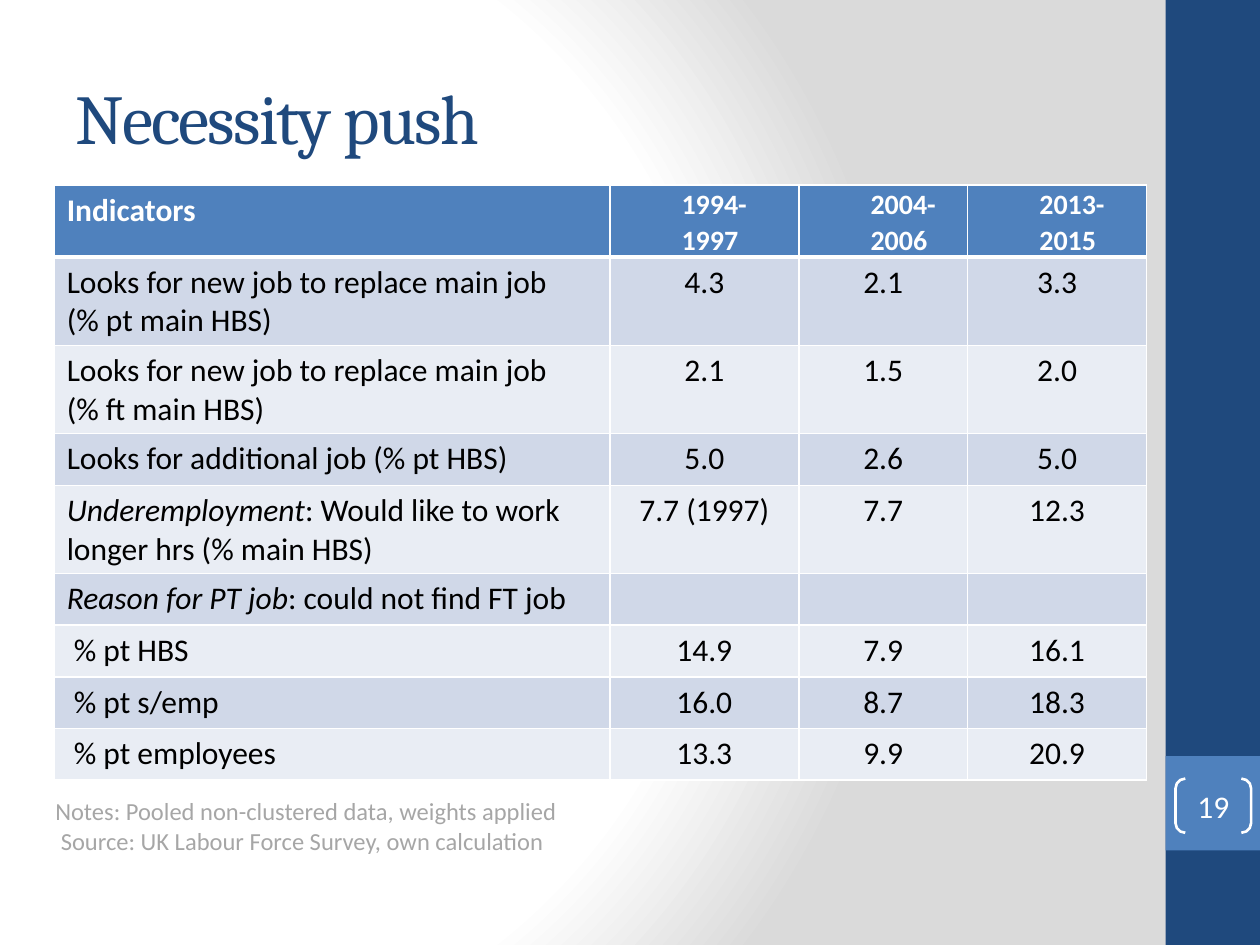
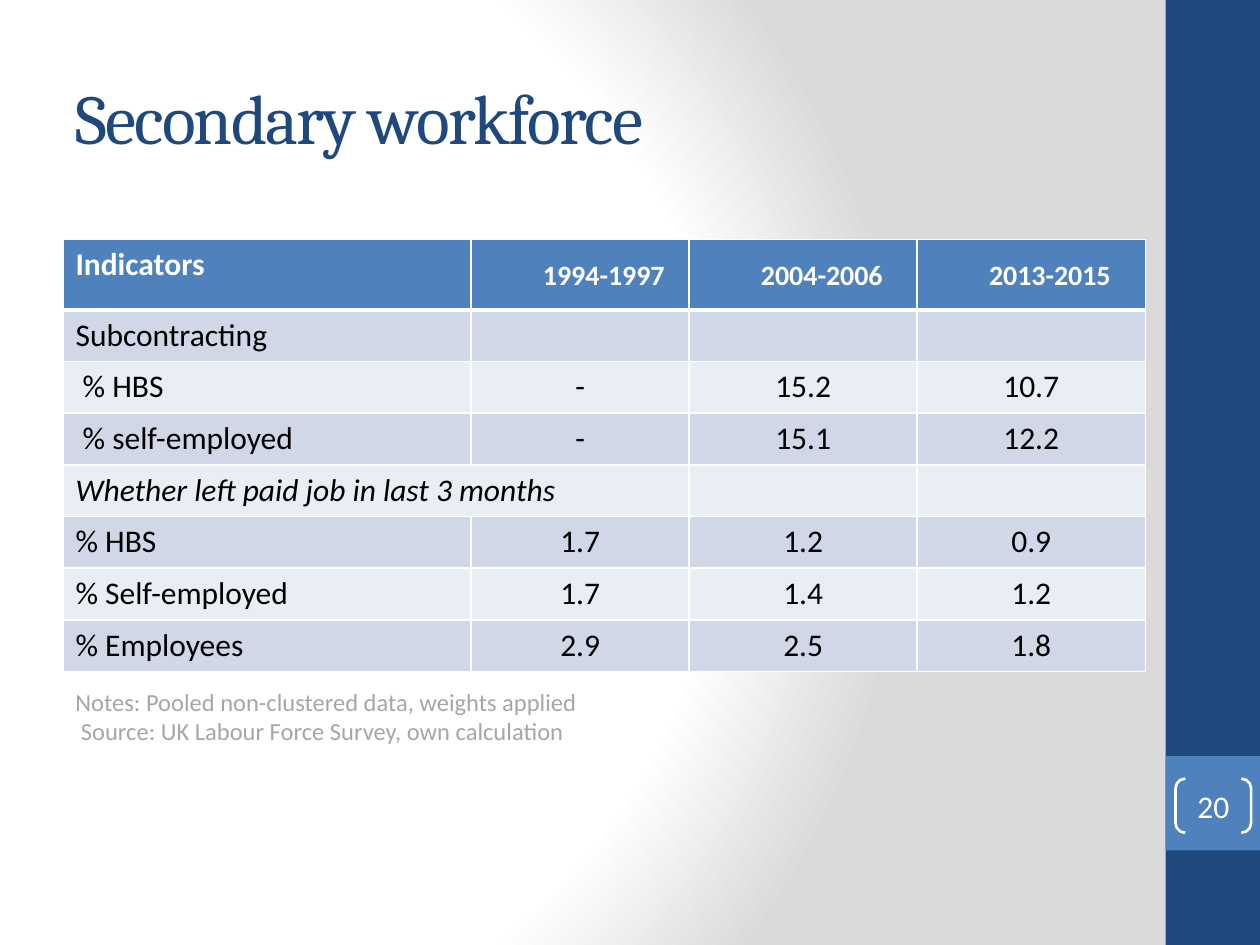
from lxml import etree
from pptx import Presentation
from pptx.dml.color import RGBColor
from pptx.enum.shapes import MSO_SHAPE
from pptx.enum.text import MSO_ANCHOR, PP_ALIGN
from pptx.oxml import parse_xml
from pptx.oxml.ns import nsdecls, qn
from pptx.util import Inches, Pt

NAVY, BLUE, WHITE, BLACK = "1F497D", "4F81BD", "FFFFFF", "000000"
GREY, SHADE, ROW_BANDS = "A6A6A6", "DADADA", ("D0D8E8", "E9EDF4")
BODY, HEADING = "Calibri", "Cambria"
HEADER_H, ROW_H = 0.56, 0.41

PERIODS = ["1994-1997", "2004-2006", "2013-2015"]
NOTES = ("Notes: Pooled non-clustered data, weights applied\n"
         " Source: UK Labour Force Survey, own calculation")

# Asterisks enclose italic words
NECESSITY_ROWS = [
    ("Looks for new job to replace main job\n(% pt main HBS)", "4.3", "2.1", "3.3"),
    ("Looks for new job to replace main job\n(% ft main HBS)", "2.1", "1.5", "2.0"),
    ("Looks for additional job (% pt HBS)", "5.0", "2.6", "5.0"),
    ("*Underemployment*: Would like to work longer hrs (% main HBS)",
     "7.7 (1997)", "7.7", "12.3"),
    ("*Reason for PT job*: could not find FT job", "", "", ""),
    (" % pt HBS", "14.9", "7.9", "16.1"),
    (" % pt s/emp", "16.0", "8.7", "18.3"),
    (" % pt employees", "13.3", "9.9", "20.9"),
]
SECONDARY_ROWS = [
    ("Subcontracting", "", "", ""),
    (" % HBS", "-", "15.2", "10.7"),
    (" % self-employed", "-", "15.1", "12.2"),
    ("*Whether left paid job in last 3 months*", "", "", ""),
    ("% HBS", "1.7", "1.2", "0.9"),
    ("% Self-employed", "1.7", "1.4", "1.2"),
    ("% Employees", "2.9", "2.5", "1.8"),
]


def rgb(color):
    return RGBColor.from_string(color)


def write(tf, text, size=18, color=BLACK, font=BODY, bold=False,
          align=PP_ALIGN.LEFT, spacing=None, indent=0, line_spacing=None):
    """Write one paragraph; *...* is italic and a newline is a line break."""
    p = tf.paragraphs[0]
    p.alignment = align
    p.font.size = Pt(size)
    if line_spacing:
        p.line_spacing = line_spacing
    if indent:
        p._p.get_or_add_pPr().set("marL", str(Inches(indent)))
    for i, part in enumerate(text.split("*")):
        for j, line in enumerate(part.split("\n")):
            if j:
                p.add_line_break()
            if not line:
                continue
            r = p.add_run()
            r.text = line
            r.font.name, r.font.size = font, Pt(size)
            r.font.bold, r.font.italic = bold, i % 2 == 1
            r.font.color.rgb = rgb(color)
            if spacing:
                r._r.get_or_add_rPr().set("spc", str(int(spacing * 100)))


def add_text(s, box, text, anchor=MSO_ANCHOR.TOP, **fmt):
    tf = s.shapes.add_textbox(*map(Inches, box)).text_frame
    tf.word_wrap = True
    tf.vertical_anchor = anchor
    write(tf, text, **fmt)


def add_preset(s, shape, box, fill=None, line=None, width=1.5):
    sp = s.shapes.add_shape(shape, *map(Inches, box))
    sp.shadow.inherit = False
    if fill:
        sp.fill.solid()
        sp.fill.fore_color.rgb = rgb(fill)
    else:
        sp.fill.background()
    if line:
        sp.line.color.rgb = rgb(line)
        sp.line.width = Pt(width)
    else:
        sp.line.fill.background()
    return sp


def set_background(master):
    """Radial gradient, inherited by every slide."""
    fill = master.background.fill
    fill.solid()
    bg_pr = master._element.cSld.find(qn("p:bg")).find(qn("p:bgPr"))
    stops = "".join(
        f'<a:gs pos="{pos * 1000}"><a:srgbClr val="{color}"/></a:gs>'
        for pos, color in ((0, WHITE), (75, WHITE), (100, SHADE)))
    gradient = parse_xml(
        f'<a:gradFill {nsdecls("a")} rotWithShape="1"><a:gsLst>{stops}</a:gsLst>'
        '<a:path path="circle"><a:fillToRect l="20000" t="50000" r="100000" '
        'b="50000"/></a:path></a:gradFill>')
    bg_pr.replace(bg_pr.find(qn("a:solidFill")), gradient)


def style_cell(cell, fill, top=1, bottom=1):
    cell.fill.solid()
    cell.fill.fore_color.rgb = rgb(fill)
    tc_pr = cell._tc.get_or_add_tcPr()
    # Borders come before the fill
    for i, (side, width) in enumerate(
            (("L", 1), ("R", 1), ("T", top), ("B", bottom))):
        ln = etree.Element(qn(f"a:ln{side}"), w=str(Pt(width)))
        solid = etree.SubElement(ln, qn("a:solidFill"))
        etree.SubElement(solid, qn("a:srgbClr"), val=WHITE)
        tc_pr.insert(i, ln)


def add_indicator_table(s, left, top, col_widths, rows):
    height = HEADER_H + ROW_H * len(rows)
    table = s.shapes.add_table(
        len(rows) + 1, len(col_widths), Inches(left), Inches(top),
        Inches(sum(col_widths)), Inches(height)).table
    for col, width in zip(table.columns, col_widths):
        col.width = Inches(width)
    for i, row in enumerate(table.rows):
        row.height = Inches(ROW_H if i else HEADER_H)

    # Header
    for j, label in enumerate(["Indicators"] + PERIODS):
        cell = table.cell(0, j)
        style_cell(cell, BLUE, bottom=3)
        fmt = dict(color=WHITE, bold=True)
        if j:
            cell.vertical_anchor = MSO_ANCHOR.MIDDLE
            cell.margin_left = cell.margin_right = Inches(0.07)
            cell.margin_top = cell.margin_bottom = 0
            fmt.update(size=16, indent=0.5, line_spacing=1.07)
        write(cell.text_frame, label, **fmt)

    # Body
    for i, values in enumerate(rows, 1):
        for j, value in enumerate(values):
            cell = table.cell(i, j)
            style_cell(cell, ROW_BANDS[(i - 1) % 2], top=3 if i == 1 else 1)
            write(cell.text_frame, value,
                  align=PP_ALIGN.CENTER if j else PP_ALIGN.LEFT)
    return table


def add_side_band(s, number, left=9.25, width=0.75):
    add_preset(s, MSO_SHAPE.RECTANGLE, (left, 0, width, 7.5), fill=NAVY)
    add_preset(s, MSO_SHAPE.RECTANGLE, (left, 6, width, width), fill=BLUE)
    sp = add_preset(s, MSO_SHAPE.DOUBLE_BRACKET,
                    (left + 0.08, 6.18, 0.6, 0.43), line=WHITE)
    sp.adjustments[0] = 0.18
    tf = sp.text_frame
    tf.margin_left = tf.margin_right = tf.margin_top = tf.margin_bottom = 0
    tf.vertical_anchor = MSO_ANCHOR.MIDDLE
    write(tf, str(number), color=WHITE, align=PP_ALIGN.CENTER)


def add_table_slide(prs, number, title, table_at, col_widths, rows, notes_at):
    s = prs.slides.add_slide(prs.slide_layouts[6])
    add_side_band(s, number)
    add_text(s, (0.5, 0.3, 8.33, 1.25), title, anchor=MSO_ANCHOR.MIDDLE,
             size=40, color=NAVY, font=HEADING, spacing=-1)
    table = add_indicator_table(s, *table_at, col_widths, rows)
    add_text(s, (*notes_at, 6.38, 0.57), NOTES, size=14, color=GREY)
    return table


def main():
    prs = Presentation()
    prs.slide_width, prs.slide_height = Inches(10), Inches(7.5)
    set_background(prs.slide_master)

    add_table_slide(prs, 19, "Necessity push", (0.43, 1.47),
                    (4.41, 1.5, 1.34, 1.42), NECESSITY_ROWS, (0.34, 6.27))
    table = add_table_slide(prs, 20, "Secondary workforce", (0.5, 1.9),
                            (3.24, 1.73, 1.81, 1.81), SECONDARY_ROWS, (0.5, 5.4))
    # The long subheading runs over two columns
    table.cell(4, 0).merge(table.cell(4, 1))

    prs.save("out.pptx")


if __name__ == "__main__":
    main()
